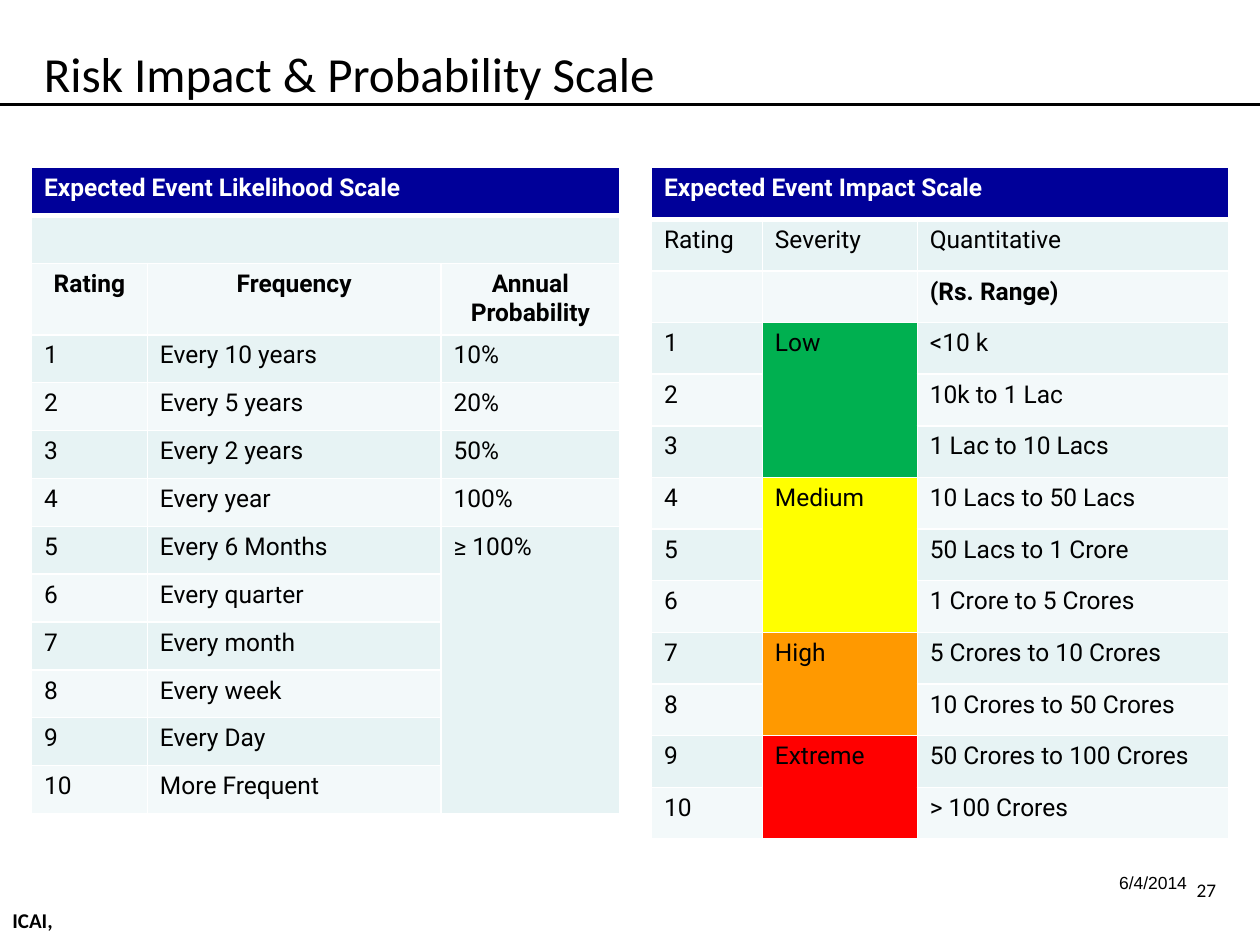
from lxml.etree import SubElement
from pptx import Presentation
from pptx.dml.color import RGBColor
from pptx.enum.shapes import MSO_CONNECTOR as Connector
from pptx.enum.text import MSO_ANCHOR as Anchor, PP_ALIGN as Align
from pptx.oxml.ns import qn
from pptx.util import Inches, Pt

BLACK = RGBColor(0x00, 0x00, 0x00)
WHITE = RGBColor(0xFF, 0xFF, 0xFF)
NAVY = RGBColor(0x00, 0x00, 0x99)
BAND_DARK = RGBColor(0xE7, 0xF3, 0xF4)
BAND_LIGHT = RGBColor(0xF3, 0xF9, 0xFA)
GREEN = RGBColor(0x00, 0xB0, 0x50)
YELLOW = RGBColor(0xFF, 0xFF, 0x00)
ORANGE = RGBColor(0xFF, 0x99, 0x00)
RED = RGBColor(0xFF, 0x00, 0x00)

# Content: merges are (first row, first column, last row, last column)
LIKELIHOOD = {
    "place": (0.25, 1.33),
    "columns": (0.92, 2.33, 1.42),
    "heights": [0.38, 0.38, 0.56] + [0.38] * 10,
    "rows": [
        ("Expected Event Likelihood Scale", "", ""),
        ("", "", ""),
        ("Rating", "Frequency", "Annual Probability"),
        ("1", "Every 10 years", "10%"),
        ("2", "Every 5 years", "20%"),
        ("3", "Every 2 years", "50%"),
        ("4", "Every year", "100%"),
        ("5", "Every 6 Months", "≥ 100%"),
        ("6", "Every quarter", ""),
        ("7", "Every month", ""),
        ("8", "Every week", ""),
        ("9", "Every Day", ""),
        ("10", "More Frequent", ""),
    ],
    "merges": [(0, 0, 0, 2), (1, 0, 1, 2), (7, 2, 12, 2)],
    "bold": {"Rating", "Frequency", "Annual Probability"},
    "centered": {"Rating", "Frequency", "Annual Probability"},
    "fills": {},
}
IMPACT = {
    "place": (5.17, 1.33),
    "columns": (0.88, 1.23, 2.47),
    "heights": [0.41] * 13,
    "rows": [
        ("Expected Event Impact Scale", "", ""),
        ("Rating", "Severity", "Quantitative"),
        ("", "", "(Rs. Range)"),
        ("1", "Low", "<10 k"),
        ("2", "", "10k to 1 Lac"),
        ("3", "", "1 Lac to 10 Lacs"),
        ("4", "Medium", "10 Lacs to 50 Lacs"),
        ("5", "", "50 Lacs to 1 Crore"),
        ("6", "", "1 Crore to 5 Crores"),
        ("7", "High", "5 Crores to 10 Crores"),
        ("8", "", "10 Crores to 50 Crores"),
        ("9", "Extreme", "50 Crores to 100 Crores"),
        ("10", "", "> 100 Crores"),
    ],
    "merges": [(0, 0, 0, 2), (3, 1, 5, 1), (6, 1, 8, 1), (9, 1, 10, 1), (11, 1, 12, 1)],
    "bold": {"(Rs. Range)"},
    "centered": set(),
    "fills": {"Low": GREEN, "Medium": YELLOW, "High": ORANGE, "Extreme": RED},
}


def add_text(page, text, place, size, font="Calibri", bold=False, align=Align.LEFT,
             anchor=Anchor.TOP, inset=True):
    box = page.shapes.add_textbox(*map(Inches, place))
    frame = box.text_frame
    frame.word_wrap = True
    frame.vertical_anchor = anchor
    if not inset:
        frame.margin_left = frame.margin_right = frame.margin_top = frame.margin_bottom = 0
    para = frame.paragraphs[0]
    para.text = text
    para.alignment = align
    set_font(para, font, size, BLACK, bold)


def set_font(para, name, size, color, bold):
    para.font.name = name
    para.font.size = Pt(size)
    para.font.color.rgb = color
    para.font.bold = bold


def set_borders(cell, bottom):
    properties = cell._tc.get_or_add_tcPr()
    for edge, width in (("L", 1), ("R", 1), ("T", 1), ("B", bottom)):
        line = SubElement(properties, qn(f"a:ln{edge}"), w=str(Pt(width)))
        fill = SubElement(line, qn("a:solidFill"))
        SubElement(fill, qn("a:srgbClr"), val=str(WHITE))


def add_scale(page, scale):
    rows, columns, heights = scale["rows"], scale["columns"], scale["heights"]
    size = (sum(columns), sum(heights))
    table = page.shapes.add_table(
        len(rows), len(columns), *map(Inches, scale["place"] + size)).table
    table.first_row = table.horz_banding = False
    for column, width in zip(table.columns, columns):
        column.width = Inches(width)
    for row, height in zip(table.rows, heights):
        row.height = Inches(height)

    # Every cell of a merged block takes the fill of its first cell
    origins = {(r, c): (top, left)
               for top, left, bottom, right in scale["merges"]
               for r in range(top, bottom + 1) for c in range(left, right + 1)}
    for r, texts in enumerate(rows):
        for c, text in enumerate(texts):
            cell = table.cell(r, c)
            top, left = origins.get((r, c), (r, c))
            band = NAVY if top == 0 else BAND_DARK if top % 2 else BAND_LIGHT
            set_borders(cell, bottom=3 if r == 0 else 1)
            cell.fill.solid()
            cell.fill.fore_color.rgb = scale["fills"].get(rows[top][left], band)
            para = cell.text_frame.paragraphs[0]
            if text:
                para.text = text
                para.alignment = Align.CENTER if text in scale["centered"] else Align.LEFT
                set_font(para, "Roboto", 14, WHITE if r == 0 else BLACK,
                         r == 0 or text in scale["bold"])
            else:
                SubElement(para._p, qn("a:endParaRPr"), sz="1400")
    for top, left, bottom, right in scale["merges"]:
        table.cell(top, left).merge(table.cell(bottom, right))


def main():
    deck = Presentation()
    deck.slide_width, deck.slide_height = Inches(10), Inches(7.5)
    page = deck.slides.add_slide(deck.slide_layouts[6])

    # Page number, title rule and footer
    add_text(page, "27", (9, 6.92, 0.75, 0.28), 11, align=Align.RIGHT)
    rule = page.shapes.add_connector(
        Connector.STRAIGHT, Inches(0), Inches(0.83), Inches(10), Inches(0.83))
    rule.line.color.rgb = BLACK
    rule.line.width = Pt(1.5)
    SubElement(rule._element.spPr, qn("a:effectLst"))
    add_text(page, "ICAI,", (0, 7.1, 4.33, 0.4), 12, bold=True, anchor=Anchor.MIDDLE)

    # Title, both scales and date
    add_text(page, "Risk Impact & Probability Scale", (0.25, 0.08, 8.83, 1), 28,
             anchor=Anchor.MIDDLE)
    for scale in (LIKELIHOOD, IMPACT):
        add_scale(page, scale)
    add_text(page, "6/4/2014", (7.75, 6.92, 1.67, 0.17), 10, font="Arial",
             align=Align.RIGHT, inset=False)
    deck.save("out.pptx")


if __name__ == "__main__":
    main()
